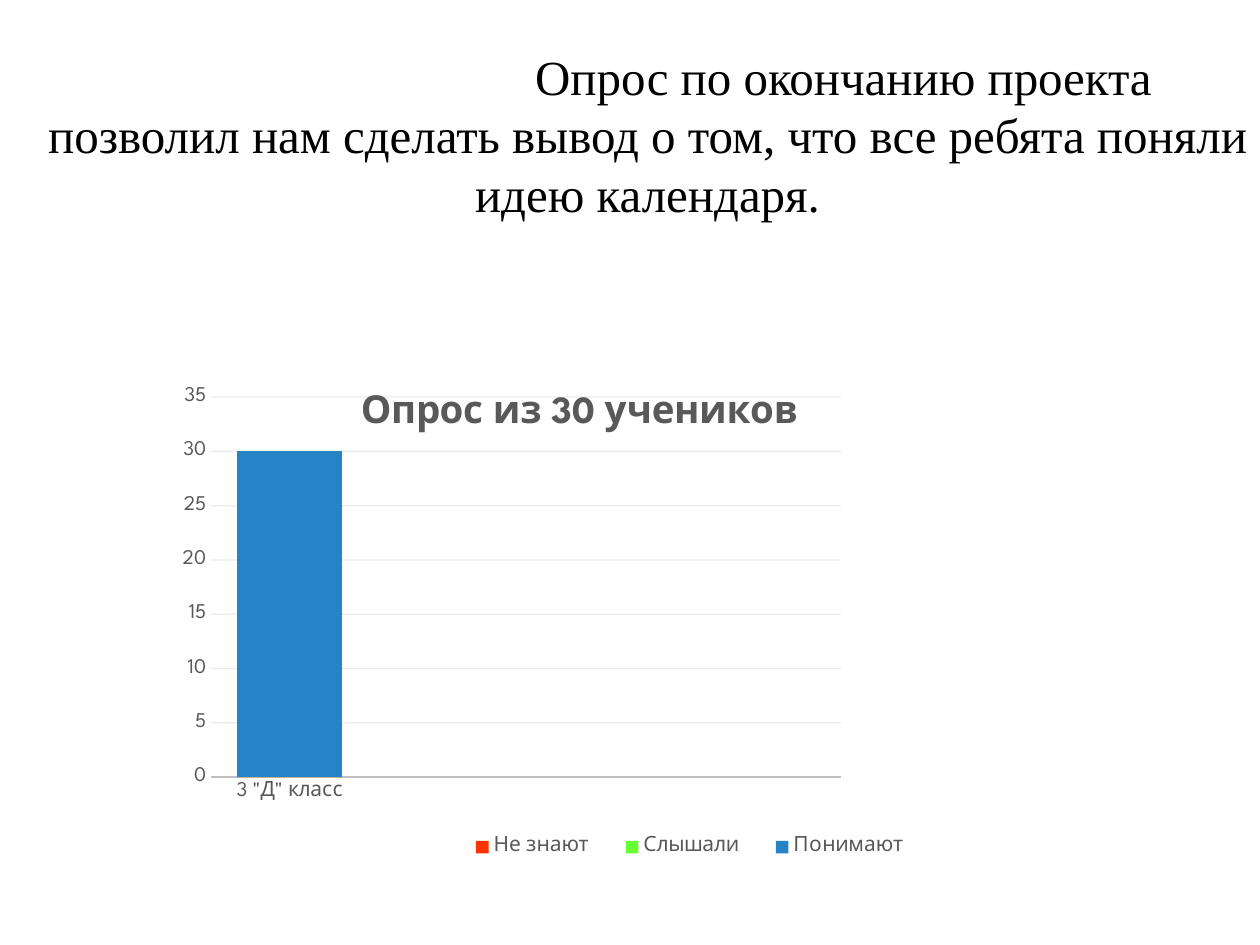
from pptx import Presentation, util as u
from pptx.chart.data import CategoryChartData
from pptx.dml.color import RGBColor
from pptx.enum import chart as ch, text
from pptx.oxml import parse_xml
from pptx.oxml.ns import nsdecls, qn

HEADLINE = ("Опрос по окончанию проекта позволил нам сделать вывод о том, "
            "что все ребята поняли идею календаря.")
CHART_TITLE = "Опрос из 30 учеников"
CLASSES = ['3 "Д" класс', "", "", ""]
ANSWERS = [
    ("Не знают", 0, "FF3300"),
    ("Слышали", 0, "66FF33"),
    ("Понимают", 30, "2683C6"),
]
THEME = {
    "headline_font": "Times New Roman", "headline_size": 28, "headline": "000000",
    "chart_font": "League Spartan", "chart_size": 12, "title_size": 22,
    "label": "595959", "axis": "BFBFBF", "grid": "D9D9D9", "line": 0.75,
}
SLIDE = (1260, 945)
HEADLINE_BOX = (35, 40, 1225, 190)
FIRST_LINE_INDENT = 392
CHART_BOX = (144, 386, 840, 559)
PLOT = (0.08, 0.02, 0.75, 0.68)
LEGEND = (0.36, 0.79, 0.58, 0.07)
TITLE = (0.25, 0.0)


def px(length):
    return u.Emu(length * 914400 // 126)


def style(font, face, size, color, bold=False):
    font.name, font.size, font.bold = face, u.Pt(size), bold
    font.color.rgb = RGBColor.from_string(color)


def style_line(line, color):
    line.width = u.Pt(THEME["line"])
    line.color.rgb = RGBColor.from_string(color)


def place(part, fractions, inner=False):
    for old in part.findall(qn("c:layout")):
        part.remove(old)
    target = '<c:layoutTarget val="inner"/>' if inner else ""
    modes = "".join(f'<c:{axis}Mode val="edge"/>' for axis in "xy")
    sizes = "".join(f'<c:{key} val="{value}"/>' for key, value in zip("xywh", fractions))
    layout = parse_xml(f'<c:layout {nsdecls("c")}><c:manualLayout>{target}{modes}{sizes}'
                       '</c:manualLayout></c:layout>')
    overlay = part.find(qn("c:overlay"))
    if overlay is None:
        part.insert(0, layout)
    else:
        overlay.addprevious(layout)


def add_headline(slide):
    frame = slide.shapes.add_textbox(*map(px, HEADLINE_BOX)).text_frame
    frame.word_wrap = True
    frame.text = HEADLINE
    paragraph = frame.paragraphs[0]
    paragraph.alignment = text.PP_ALIGN.CENTER
    paragraph._p.get_or_add_pPr().set("indent", str(px(FIRST_LINE_INDENT)))
    style(paragraph.runs[0].font, THEME["headline_font"], THEME["headline_size"],
          THEME["headline"])


def add_survey(slide):
    survey = CategoryChartData()
    survey.categories = CLASSES
    for name, count, _ in ANSWERS:
        survey.add_series(name, [count, None, None, None])
    chart = slide.shapes.add_chart(ch.XL_CHART_TYPE.COLUMN_STACKED,
                                   *map(px, CHART_BOX), survey).chart
    style(chart.font, THEME["chart_font"], THEME["chart_size"], THEME["label"])

    title = chart.chart_title
    title.text_frame.text = CHART_TITLE
    style(title.text_frame.paragraphs[0].runs[0].font, THEME["chart_font"],
          THEME["title_size"], THEME["label"], bold=True)
    place(title._element, TITLE)

    chart.has_legend = True
    chart.legend.position = ch.XL_LEGEND_POSITION.BOTTOM
    chart.legend.include_in_layout = False
    place(chart.legend._element, LEGEND)
    place(chart._chartSpace.chart.plotArea, PLOT, inner=True)

    bars = chart.plots[0]
    bars.gap_width, bars.overlap, bars.vary_by_categories = 50, 100, False
    for series, (_, _, color) in zip(bars.series, ANSWERS):
        series.format.fill.solid()
        series.format.fill.fore_color.rgb = RGBColor.from_string(color)

    for axis in (chart.category_axis, chart.value_axis):
        axis.major_tick_mark = axis.minor_tick_mark = ch.XL_TICK_MARK.NONE
        style(axis.tick_labels.font, THEME["chart_font"], THEME["chart_size"], THEME["label"])
    style_line(chart.category_axis.format.line, THEME["axis"])
    counts = chart.value_axis
    counts.minimum_scale, counts.maximum_scale, counts.major_unit = 0, 35, 5
    counts.format.line.fill.background()
    grid = counts.major_gridlines.format.line
    style_line(grid, THEME["grid"])
    grid_color = counts._element.find(qn("c:majorGridlines")).find(".//" + qn("a:srgbClr"))
    grid_color.append(parse_xml(f'<a:alpha {nsdecls("a")} val="50000"/>'))


def main():
    deck = Presentation()
    deck.slide_width, deck.slide_height = map(px, SLIDE)
    slide = deck.slides.add_slide(deck.slide_layouts[6])
    add_headline(slide)
    add_survey(slide)
    deck.save("out.pptx")


if __name__ == "__main__":
    main()
